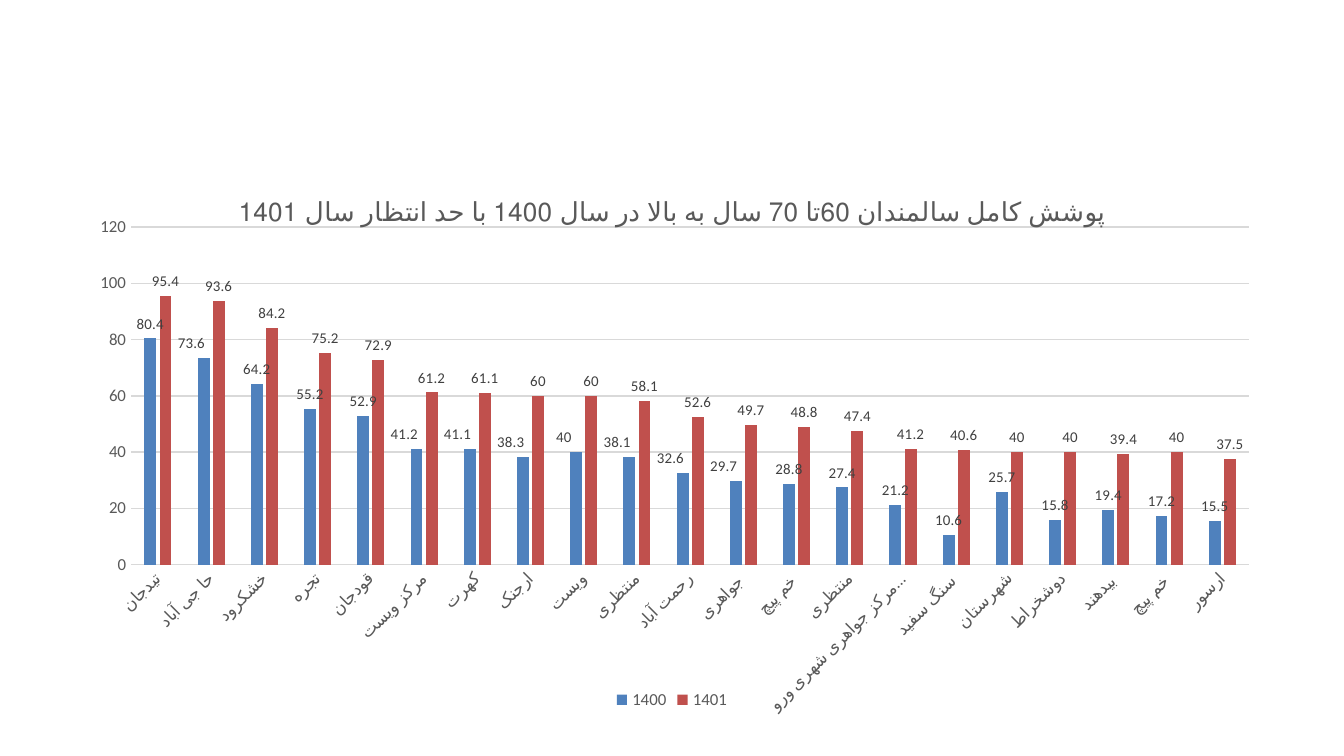
from dataclasses import dataclass

from lxml import etree
from pptx import Presentation
from pptx.chart.data import CategoryChartData
from pptx.dml.color import RGBColor
from pptx.enum.chart import XL_CHART_TYPE, XL_LABEL_POSITION, XL_LEGEND_POSITION, XL_TICK_MARK
from pptx.oxml.ns import qn
from pptx.util import Inches, Pt

CLUSTERED = XL_CHART_TYPE.COLUMN_CLUSTERED
OUTSIDE_END = XL_LABEL_POSITION.OUTSIDE_END
BOTTOM = XL_LEGEND_POSITION.BOTTOM
NO_TICK = XL_TICK_MARK.NONE


@dataclass(frozen=True)
class Theme:
    font: str = "Calibri"
    text: str = "595959"
    label: str = "404040"
    grid: str = "D9D9D9"
    bars: tuple = ("4F81BD", "C0504D")
    title_size: float = 14
    axis_size: float = 9
    label_size: float = 8
    line: float = 0.75


THEME = Theme()
TITLE = "پوشش کامل سالمندان 60تا 70 سال به بالا در سال 1400 با حد انتظار سال 1401"
COVERAGE = [
    ("تیدجان", 80.4, 95.4),
    ("حا جی آباد", 73.6, 93.6),
    ("خشکرود", 64.2, 84.2),
    ("تجره", 55.2, 75.2),
    ("قودجان", 52.9, 72.9),
    ("مرکز ویست", 41.2, 61.2),
    ("کهرت", 41.1, 61.1),
    ("ارجنک", 38.3, 60),
    ("ویست", 40, 60),
    ("منتظری", 38.1, 58.1),
    ("رحمت آباد", 32.6, 52.6),
    ("جواهری ", 29.7, 49.7),
    ("خم پیچ ", 28.8, 48.8),
    ("منتظری", 27.4, 47.4),
    ("مرکز جواهری شهری وروستایی ", 21.2, 41.2),
    ("سنگ سفید ", 10.6, 40.6),
    ("شهرستان", 25.7, 40),
    ("دوشخراط", 15.8, 40),
    ("بیدهند ", 19.4, 39.4),
    ("خم پیچ ", 17.2, 40),
    ("ارسور", 15.5, 37.5),
]
SHIFTED_LABELS = (1, *range(5, 12))
LABEL_SHIFT = -0.01


def style_font(font, size, color):
    font.name = THEME.font
    font.size = Pt(size)
    font.bold = False
    font.color.rgb = RGBColor.from_string(color)


def style_line(line):
    line.color.rgb = RGBColor.from_string(THEME.grid)
    line.width = Pt(THEME.line)


def make_layout(**settings):
    layout = etree.Element(qn("c:layout"))
    manual = etree.SubElement(layout, qn("c:manualLayout"))
    for name, value in settings.items():
        etree.SubElement(manual, qn(f"c:{name}")).set("val", str(value))
    return layout


def add_chart(slide):
    names, *columns = zip(*COVERAGE)
    chart_data = CategoryChartData()
    chart_data.categories = names
    for year, values in zip(("1400", "1401"), columns):
        chart_data.add_series(year, values)
    frame = slide.shapes.add_chart(
        CLUSTERED, Inches(0.49), Inches(1.3), Inches(9.02), Inches(4.02), chart_data)
    chart = frame.chart
    style_font(chart.font, 10, "000000")
    return chart


def style_title(chart):
    para = chart.chart_title.text_frame.paragraphs[0]
    span = para.add_run()
    span.text = TITLE
    style_font(span.font, THEME.title_size, THEME.text)


def style_axes(chart):
    for axis in (chart.category_axis, chart.value_axis):
        axis.major_tick_mark = NO_TICK
        axis.minor_tick_mark = NO_TICK
        style_font(axis.tick_labels.font, THEME.axis_size, THEME.text)
    style_line(chart.category_axis.format.line)
    values = chart.value_axis
    values.minimum_scale, values.maximum_scale, values.major_unit = 0, 120, 20
    values.format.line.fill.background()
    style_line(values.major_gridlines.format.line)
    body = chart.category_axis._element.find(qn("c:txPr")).find(qn("a:bodyPr"))
    body.set("rot", "-2700000")
    body.set("vert", "horz")


def style_legend(chart):
    chart.has_legend = True
    chart.legend.position = BOTTOM
    chart.legend.include_in_layout = False
    style_font(chart.legend.font, THEME.axis_size, THEME.text)


def style_series(series, color):
    series.format.fill.solid()
    series.format.fill.fore_color.rgb = RGBColor.from_string(color)
    series.invert_if_negative = False
    labels = series.data_labels
    labels.show_value = True
    labels.position = OUTSIDE_END
    style_font(labels.font, THEME.label_size, THEME.label)


def shift_labels(series):
    for index in SHIFTED_LABELS:
        label = series.points[index].data_label
        label.position = OUTSIDE_END
        style_font(label.font, THEME.label_size, THEME.label)
    for label in series._element.iter(qn("c:dLbl")):
        label.find(qn("c:idx")).addnext(make_layout(x=LABEL_SHIFT, y=0))


def place_plot(chart):
    area = chart._chartSpace.find(qn("c:chart")).find(qn("c:plotArea"))
    old = area.find(qn("c:layout"))
    if old is not None:
        area.remove(old)
    area.insert(0, make_layout(
        layoutTarget="inner", xMode="edge", yMode="edge", x=0.054, y=0.097, w=0.922, h=0.625))


def main():
    deck = Presentation()
    deck.slide_width = Inches(10)
    deck.slide_height = deck.slide_width * 9 // 16
    slide = deck.slides.add_slide(deck.slide_layouts[6])
    chart = add_chart(slide)
    style_title(chart)
    style_axes(chart)
    style_legend(chart)
    plot = chart.plots[0]
    plot.gap_width, plot.overlap = 219, -27
    plot.vary_by_categories = False
    for series, color in zip(plot.series, THEME.bars):
        style_series(series, color)
    shift_labels(plot.series[0])
    place_plot(chart)
    deck.save("out.pptx")


if __name__ == "__main__":
    main()
